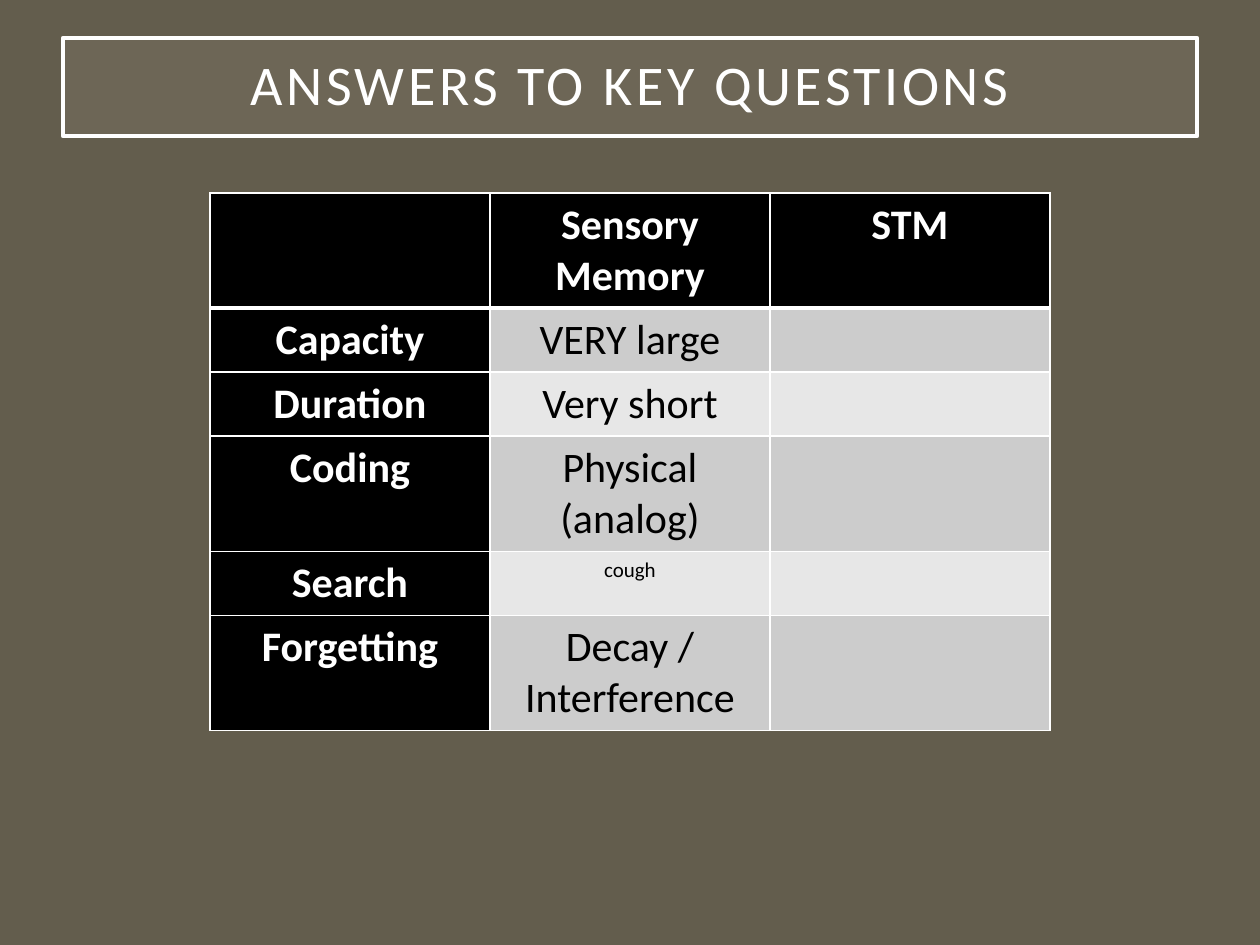
from dataclasses import dataclass

import lxml.etree
import pptx
import pptx.dml.color
import pptx.enum.text
import pptx.oxml.ns
import pptx.util

EMU_PER_PX = 914400 // 126
ALIGN = pptx.enum.text.PP_ALIGN
ANCHOR = pptx.enum.text.MSO_ANCHOR


@dataclass(frozen=True)
class Theme:
    font: str = "Calibri"
    background: str = "635D4D"
    title_fill: str = "A7A08E"
    title_opacity: int = 15
    light: str = "FFFFFF"
    dark: str = "000000"
    bands: tuple[str, str] = ("CCCCCC", "E7E7E7")
    title_size: int = 32
    body_size: int = 24
    aside_size: int = 12
    title_line: float = 2.5
    grid_line: int = 1
    header_line: int = 3


@dataclass(frozen=True)
class Question:
    label: str
    sensory: str
    stm: str
    height: int
    size: int


THEME = Theme()
ONE_LINE, TWO_LINES = 64, 115
HEADER = Question("", "Sensory Memory", "STM", TWO_LINES, THEME.body_size)
QUESTIONS = [
    Question("Capacity", "VERY large", "", ONE_LINE, THEME.body_size),
    Question("Duration", "Very short", "", ONE_LINE, THEME.body_size),
    Question("Coding", "Physical (analog)", "", TWO_LINES, THEME.body_size),
    Question("Search", "cough", "", ONE_LINE, THEME.aside_size),
    Question("Forgetting", "Decay / Interference", "", TWO_LINES, THEME.body_size),
]


def px(length: int) -> pptx.util.Emu:
    return pptx.util.Emu(length * EMU_PER_PX)


def rgb(color: str) -> pptx.dml.color.RGBColor:
    return pptx.dml.color.RGBColor.from_string(color)


def add_child(parent, tag: str, **attributes: str):
    return lxml.etree.SubElement(parent, pptx.oxml.ns.qn(tag), **attributes)


def write(frame, text: str, *, size: int, color: str, bold: bool = False,
          tracking: int = 0, line_spacing: float | None = None) -> None:
    """Put one centred, formatted run into a text frame."""
    paragraph = frame.paragraphs[0]
    paragraph.alignment = ALIGN.CENTER
    if line_spacing:
        paragraph.line_spacing = line_spacing
    run = paragraph.add_run()
    run.text = text
    run.font.name = THEME.font
    run.font.size = pptx.util.Pt(size)
    run.font.bold = bold
    run.font.color.rgb = rgb(color)
    if tracking:
        run.font._element.set("spc", str(tracking * 100))


def draw_title(slide, text: str) -> None:
    title = slide.shapes.title
    title.left, title.top, title.width, title.height = map(px, (63, 38, 1134, 98))
    title.fill.solid()
    title.fill.fore_color.rgb = rgb(THEME.title_fill)
    fill_color = title._element.spPr.find(".//" + pptx.oxml.ns.qn("a:srgbClr"))
    add_child(fill_color, "a:alpha", val=str(THEME.title_opacity * 1000))
    title.line.color.rgb = rgb(THEME.light)
    title.line.width = pptx.util.Pt(THEME.title_line)

    frame = title.text_frame
    frame.auto_size = pptx.enum.text.MSO_AUTO_SIZE.NONE
    frame.word_wrap = True
    frame.vertical_anchor = ANCHOR.MIDDLE
    frame.margin_left = frame.margin_right = pptx.util.Inches(0.2)
    frame.margin_top = frame.margin_bottom = pptx.util.Inches(0.2)
    write(frame, text, size=THEME.title_size, color=THEME.light,
          tracking=2, line_spacing=0.9)


def draw_borders(cell, *, top: int, bottom: int) -> None:
    properties = cell._tc.get_or_add_tcPr()
    widths = {"a:lnL": THEME.grid_line, "a:lnR": THEME.grid_line,
              "a:lnT": top, "a:lnB": bottom}
    for side, width in widths.items():
        line = add_child(properties, side, w=str(pptx.util.Pt(width)))
        add_child(add_child(line, "a:solidFill"), "a:srgbClr", val=THEME.light)


def draw_cell(cell, text: str, *, size: int, heading: bool, fill: str,
              top: int, bottom: int) -> None:
    draw_borders(cell, top=top, bottom=bottom)
    cell.fill.solid()
    cell.fill.fore_color.rgb = rgb(fill)
    if text:
        write(cell.text_frame, text, size=size, bold=heading,
              color=THEME.light if heading else THEME.dark)


def draw_answers(slide, questions: list[Question]) -> None:
    rows = [HEADER, *questions]
    height = sum(row.height for row in rows)
    answers = slide.shapes.add_table(
        len(rows), 3, px(210), px(193), px(840), px(height)).table
    answers.first_row = answers.horz_banding = False
    for column in answers.columns:
        column.width = px(280)

    for r, row in enumerate(rows):
        answers.rows[r].height = px(row.height)
        for c, text in enumerate((row.label, row.sensory, row.stm)):
            heading = r == 0 or c == 0
            draw_cell(
                answers.cell(r, c), text, heading=heading,
                size=THEME.body_size if heading else row.size,
                fill=THEME.dark if heading else THEME.bands[(r - 1) % 2],
                top=THEME.header_line if r == 1 else THEME.grid_line,
                bottom=THEME.header_line if r == 0 else THEME.grid_line)


def main() -> None:
    deck = pptx.Presentation()
    deck.slide_width, deck.slide_height = px(1260), px(945)
    slide = deck.slides.add_slide(deck.slide_layouts.get_by_name("Title Only"))

    # Background
    slide.background.fill.solid()
    slide.background.fill.fore_color.rgb = rgb(THEME.background)

    # Title bar
    draw_title(slide, "ANSWERS TO KEY QUESTIONS")

    # Comparison of the two memory stores
    draw_answers(slide, QUESTIONS)

    deck.save("out.pptx")


if __name__ == "__main__":
    main()
